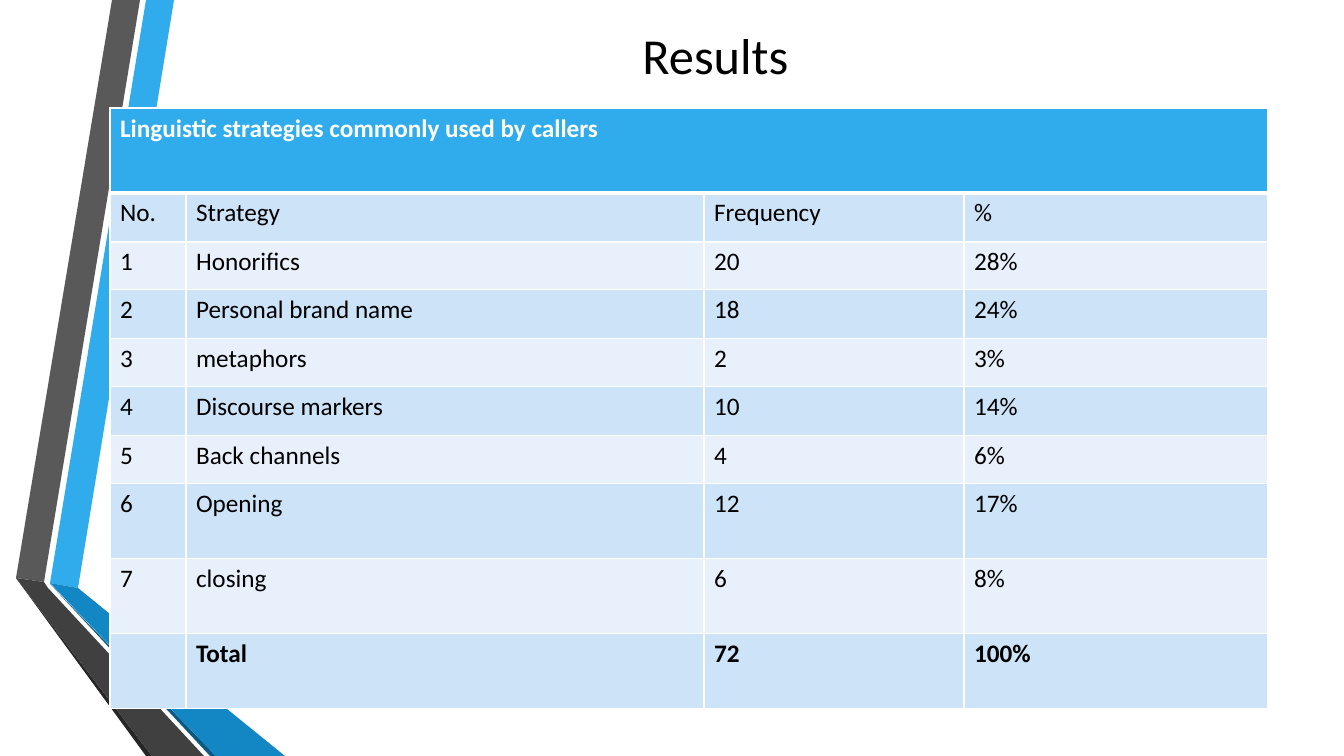
from lxml.etree import SubElement
from pptx import Presentation
from pptx.dml.color import RGBColor
from pptx.enum.text import MSO_ANCHOR, PP_ALIGN
from pptx.oxml.ns import qn
from pptx.util import Pt

PX = 914400 / 100.8  # EMU per px
FONT = "Calibri"
BLACK = RGBColor(0x00, 0x00, 0x00)
WHITE = RGBColor(0xFF, 0xFF, 0xFF)
BLUE = RGBColor(0x30, 0xAC, 0xEC)
MID_BLUE = RGBColor(0x12, 0x87, 0xC3)
DEEP_BLUE = RGBColor(0x0C, 0x5A, 0x82)
GREY = RGBColor(0x59, 0x59, 0x59)
DARK_GREY = RGBColor(0x40, 0x40, 0x40)
CHARCOAL = RGBColor(0x26, 0x26, 0x26)
BAND_DARK = RGBColor(0xCD, 0xE3, 0xF8)
BAND_LIGHT = RGBColor(0xE8, 0xF1, 0xFB)


def px(n):
    return round(n * PX)


def add_border(cell, side, width):
    ln = SubElement(cell._tc.get_or_add_tcPr(), qn(f"a:{side}"), w=str(Pt(width)))
    fill = SubElement(ln, qn("a:solidFill"))
    SubElement(fill, qn("a:srgbClr"), val=str(WHITE))


prs = Presentation()
prs.slide_width, prs.slide_height = px(1344), px(756)
s = prs.slides.add_slide(prs.slide_layouts[5])

# Folded ribbons, back to front
ribbons = [
    (BLUE, [(50, 583), (78, 588), (174, 0), (146, 0)]),
    (GREY, [(140, 0), (112, 0), (16, 578), (44, 582)]),
    (CHARCOAL, [(16, 578), (146, 756), (152, 756)]),
    (DEEP_BLUE, [(50, 584), (210, 756), (216, 756)]),
    (MID_BLUE, [(50, 583), (216, 756), (285, 756), (78, 588)]),
    (DARK_GREY, [(204, 756), (48, 588), (44, 582), (16, 578), (152, 756)]),
]
for color, points in ribbons:
    fb = s.shapes.build_freeform(*points[0], scale=PX)
    fb.add_line_segments(points[1:], close=True)
    sp = fb.convert_to_shape()
    sp.shadow.inherit = False
    sp.fill.solid()
    sp.fill.fore_color.rgb = color
    sp.line.fill.background()

# Title
title = s.shapes.title
title.left, title.top, title.width, title.height = px(163), px(17), px(1105), px(74)
tf = title.text_frame
tf.text = "Results"
tf.vertical_anchor = MSO_ANCHOR.MIDDLE
p = tf.paragraphs[0]
p.alignment = PP_ALIGN.CENTER
p.font.name, p.font.size = FONT, Pt(36)
p.font.color.rgb = BLACK

# Table of strategies
rows = [
    ("Linguistic strategies commonly used by callers", "", "", ""),
    ("No.", "Strategy", "Frequency", "%"),
    ("1", "Honorifics", "20", "28%"),
    ("2", "Personal brand name", "18", "24%"),
    ("3", "metaphors", "2", "3%"),
    ("4", "Discourse markers", "10", "14%"),
    ("5", "Back channels", "4", "6%"),
    ("6", "Opening", "12", "17%"),
    ("7", "closing", "6", "8%"),
    ("", "Total", "72", "100%"),
]
col_widths = [76, 518, 260, 304]
row_heights = [85] + [49, 48] * 3 + [75] * 3
table = s.shapes.add_table(
    len(rows), len(col_widths), px(110), px(108),
    px(sum(col_widths)), px(sum(row_heights)),
).table
for col, width in zip(table.columns, col_widths):
    col.width = px(width)
for row, height in zip(table.rows, row_heights):
    row.height = px(height)

for i, values in enumerate(rows):
    header, total = i == 0, i == len(rows) - 1
    band = BLUE if header else BAND_DARK if i % 2 else BAND_LIGHT
    for j, value in enumerate(values):
        cell = table.cell(i, j)
        for side in ("lnL", "lnR", "lnT", "lnB"):
            thick = (header and side == "lnB") or (i == 1 and side == "lnT")
            add_border(cell, side, 3 if thick else 1)
        cell.fill.solid()
        cell.fill.fore_color.rgb = band
        cell.text = value
        p = cell.text_frame.paragraphs[0]
        p.font.name, p.font.size = FONT, Pt(18)
        p.font.bold = header or total
        p.font.color.rgb = WHITE if header else BLACK
table.cell(0, 0).merge(table.cell(0, len(col_widths) - 1))

prs.save("out.pptx")
